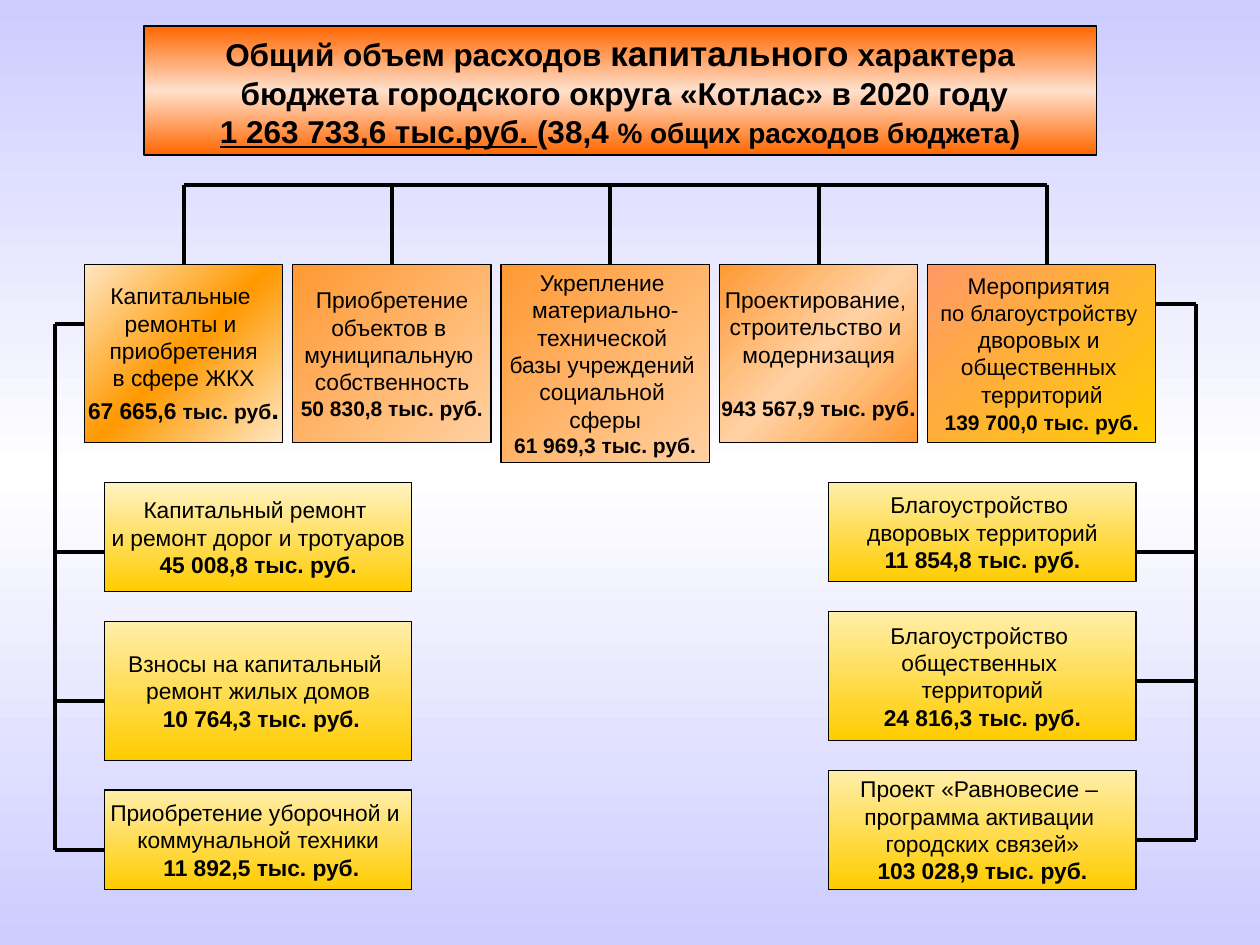
from lxml import etree
from pptx import Presentation, util as u
from pptx.dml.color import RGBColor
from pptx.enum import shapes, text
from pptx.oxml import ns

BLACK = RGBColor(0x00, 0x00, 0x00)
WHITE = RGBColor(0xFF, 0xFF, 0xFF)
LAVENDER = RGBColor(0xCC, 0xCC, 0xFF)
DEEP_ORANGE = RGBColor(0xFF, 0x66, 0x00)
PEACH = RGBColor(0xFF, 0xE0, 0xCC)
CREAM = RGBColor(0xFF, 0xE7, 0xC3)
AMBER = RGBColor(0xFF, 0x99, 0x00)
ORANGE = RGBColor(0xFF, 0x99, 0x33)
PALE_ORANGE = RGBColor(0xFF, 0xD2, 0xA5)
SOFT_ORANGE = RGBColor(0xFF, 0xD0, 0xA1)
SALMON = RGBColor(0xFF, 0x99, 0x66)
GOLD = RGBColor(0xFF, 0xCC, 0x00)
PALE_YELLOW = RGBColor(0xFF, 0xF3, 0xC3)
YELLOW = RGBColor(0xFF, 0xEE, 0xA9)


class Chart:
    """Organisation chart on a 2 mm grid; positions are columns and rows."""
    font, size = "Arial", 13
    cell = u.Mm(2)
    left, top = u.Inches(0.04), u.Inches(0.05)

    def __init__(self, page):
        self.page = page

    def x(self, column):
        return round(self.left + column * self.cell)

    def y(self, row):
        return round(self.top + row * self.cell)

    def gradient(self, fill, owner, colours, angle):
        """Spread the colours evenly, with the angle measured clockwise."""
        fill.gradient()
        fill.gradient_angle = 360 - angle
        stops = owner.find(".//" + ns.qn("a:gsLst"))
        for stop in list(stops):
            stops.remove(stop)
        for index, colour in enumerate(colours):
            position = 100000 * index // (len(colours) - 1)
            stop = etree.SubElement(stops, ns.qn("a:gs"), pos=str(position))
            etree.SubElement(stop, ns.qn("a:srgbClr"), val=str(colour))

    def background(self, *colours):
        fill = self.page.background.fill
        self.gradient(fill, self.page.element, colours, 90)

    def box(self, column, row, width, height, colours, angle, lines, last_gap=0):
        """Each line is a plain string or a list of (text, size, bold, underline)."""
        box = self.page.shapes.add_shape(
            shapes.MSO_SHAPE.RECTANGLE, self.x(column), self.y(row),
            width * self.cell, height * self.cell)
        box.shadow.inherit = False
        self.gradient(box.fill, box.element, colours, angle)
        box.line.color.rgb = BLACK
        box.line.width = u.Pt(0.75)
        frame = box.text_frame
        frame.word_wrap = False
        frame.vertical_anchor = text.MSO_ANCHOR.MIDDLE
        for index, line in enumerate(lines):
            para = frame.add_paragraph() if index else frame.paragraphs[0]
            para.alignment = text.PP_ALIGN.CENTER
            for run in [(line,)] if isinstance(line, str) else line:
                self.span(para, *run)
        if last_gap:
            para.space_before = u.Pt(last_gap)
        return box

    def span(self, para, words, size=size, bold=False, underline=False):
        span = para.add_run()
        span.text = words
        span.font.name = self.font
        span.font.size = u.Pt(size)
        span.font.bold = bold
        span.font.underline = underline
        span.font.color.rgb = BLACK

    def line(self, start, end, weight=2.25):
        line = self.page.shapes.add_connector(
            shapes.MSO_CONNECTOR.STRAIGHT,
            self.x(start[0]), self.y(start[1]), self.x(end[0]), self.y(end[1]))
        line.line.color.rgb = BLACK
        line.line.width = u.Pt(weight)
        etree.SubElement(line.element.spPr, ns.qn("a:effectLst"))
        return line


def amount(words, size=13):
    return [(words, size, True)]


TITLE = [
    [("Общий объем расходов ", 18, True), ("капитального", 20, True),
     (" характера", 18, True)],
    [(" бюджета городского округа «Котлас» в 2020 году", 18, True)],
    [("1 263 733,6 тыс.руб. ", 18, True, True), ("(38,4 ", 18, True),
     ("% общих расходов бюджета", 16, True), (")", 18, True)],
]

# width, height, colours, lines, space above the amount
CATEGORIES = [
    (20, 18, (CREAM, AMBER, CREAM),
     ["Капитальные ", "ремонты и ", "приобретения", "в сфере ЖКХ",
      [("67 665,6 ", 13, True), ("тыс. руб", 12, True), (".", 16, True)]], 0),
    (20, 18, (ORANGE, SOFT_ORANGE),
     ["Приобретение", "объектов в ", "муниципальную ", "собственность",
      amount("50 830,8 тыс. руб.", 12)], 0),
    (21, 20, (ORANGE, SOFT_ORANGE),
     ["Укрепление ", "материально-", "технической ", "базы учреждений ",
      "социальной ", "сферы", amount("61 969,3 тыс. руб.", 12)], 0),
    (20, 18, (ORANGE, PALE_ORANGE, ORANGE),
     ["Проектирование, ", "строительство и ", "модернизация",
      [("943 567,9 тыс. руб", 12, True), (".", 13, True)]], 15),
    (23, 18, (SALMON, GOLD),
     ["Мероприятия ", [("по благоустройству ", 12.5)], "дворовых и ",
      "общественных ", "территорий",
      [("139 700,0 тыс. руб", 12, True), (".", 13, True)]], 0),
]

# height, row of the branch line, top colour, lines
HOUSING = [
    (11, 55, PALE_YELLOW, ["Капитальный ремонт ", "и ремонт дорог и тротуаров",
                           amount("45 008,8 тыс. руб.")]),
    (14, 70, YELLOW, ["Взносы на капитальный ", "ремонт жилых домов",
                      amount(" 10 764,3 тыс. руб.")]),
    (10, 85, YELLOW, ["Приобретение уборочной и ", "коммунальной техники",
                      amount(" 11 892,5 тыс. руб.")]),
]
LANDSCAPING = [
    (10, 55, YELLOW, ["Благоустройство ", "дворовых территорий",
                      amount("11 854,8 тыс. руб.")]),
    (13, 68, YELLOW, ["Благоустройство ", "общественных ", "территорий",
                      amount("24 816,3 тыс. руб.")]),
    (12, 84, YELLOW, ["Проект «Равновесие – ", "программа активации ",
                      "городских связей»", amount("103 028,9 тыс. руб.")]),
]


def add_categories(chart, column=8, bar_row=18, row=26):
    drops = []
    for width, height, colours, lines, last_gap in CATEGORIES:
        box = chart.box(column, row, width, height, colours, 45, lines, last_gap)
        drop = column + (width + 1) // 2
        line = chart.line((drop, bar_row), (drop, row))
        if width % 2 == 0:
            line.end_connect(box, 0)
        drops.append(drop)
        column += width + 1
    chart.line((drops[0], bar_row), (drops[-1], bar_row))


def add_branch(chart, details, column, edge, trunk, parent, weight):
    """Stack the details and join them to the trunk; parent is (column, row)."""
    row = 48
    for height, branch_row, colour, lines in details:
        chart.box(column, row, 31, height, (colour, GOLD), 90, lines)
        chart.line((trunk, branch_row), (edge, branch_row), weight)
        row += height + 3
    chart.line((trunk, parent[1]), parent)
    chart.line((trunk, parent[1]), (trunk, details[-1][1]))


def main():
    deck = Presentation()
    deck.slide_width, deck.slide_height = u.Inches(10), u.Inches(7.5)
    chart = Chart(deck.slides.add_slide(deck.slide_layouts[6]))
    chart.background(LAVENDER, WHITE, LAVENDER)
    chart.box(14, 2, 96, 13, (DEEP_ORANGE, PEACH, DEEP_ORANGE), 90, TITLE)
    add_categories(chart)
    add_branch(chart, HOUSING, 10, 10, 5, (8, 32), 2.25)
    add_branch(chart, LANDSCAPING, 83, 114, 120, (116, 30), 2.5)
    deck.save("out.pptx")


if __name__ == "__main__":
    main()
